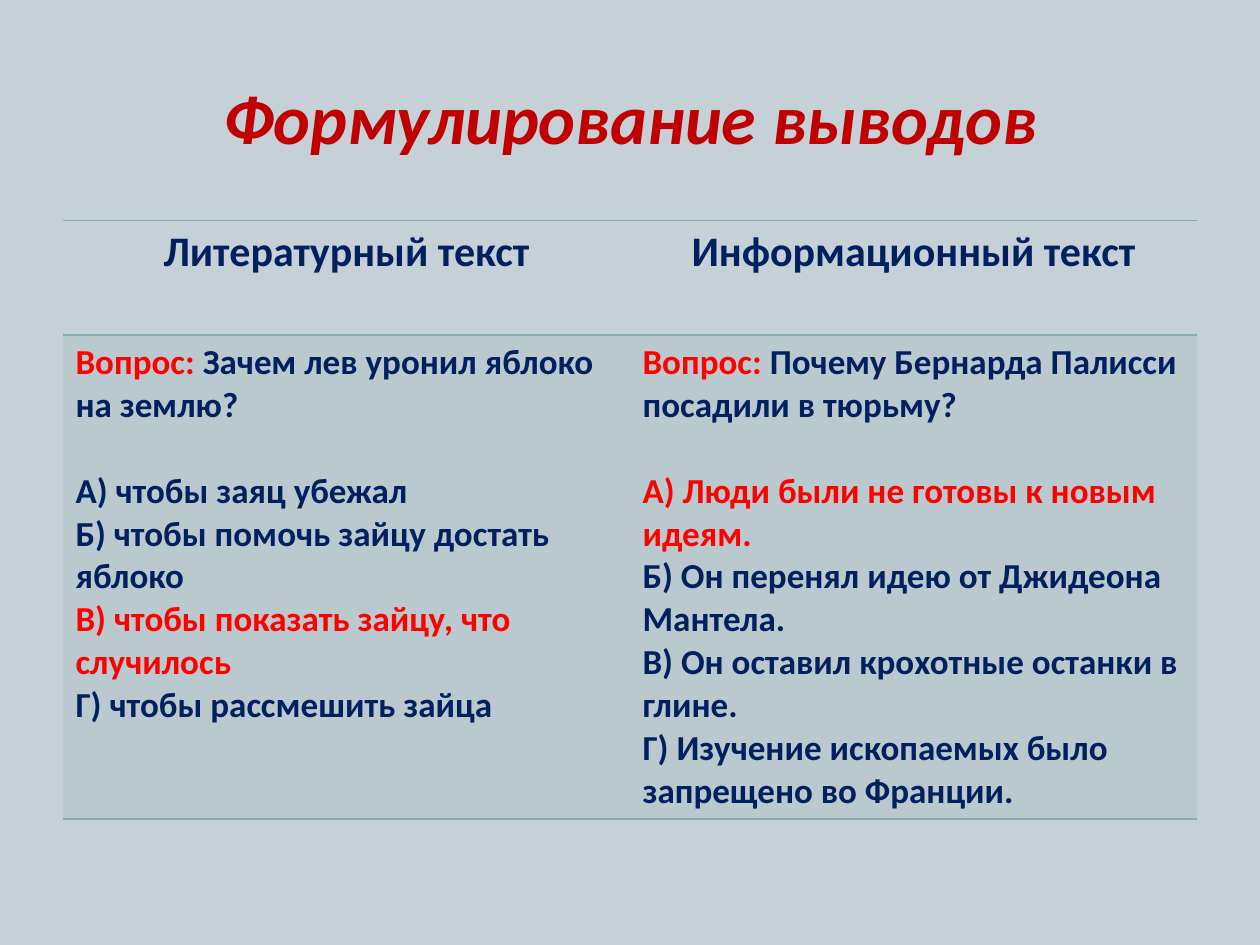
from lxml.etree import SubElement
from pptx import Presentation
from pptx.dml.color import RGBColor
from pptx.enum.text import MSO_ANCHOR, PP_ALIGN
from pptx.oxml import parse_xml
from pptx.oxml.ns import nsdecls, qn
from pptx.util import Inches, Pt

# Content: each column has a heading, a question, answers and the right answer
TITLE = "Формулирование выводов"
QUESTION_LABEL = "Вопрос: "
COLUMNS = [
    {
        "heading": "Литературный текст",
        "question": "Зачем лев уронил яблоко на землю?",
        "answers": [
            "А) чтобы заяц убежал",
            "Б) чтобы помочь зайцу достать яблоко",
            "В) чтобы показать зайцу, что случилось",
            "Г) чтобы рассмешить зайца",
        ],
        "correct": 2,
    },
    {
        "heading": "Информационный текст",
        "question": "Почему Бернарда Палисси посадили в тюрьму?",
        "answers": [
            "А) Люди были не готовы к новым идеям.",
            "Б) Он перенял идею от Джидеона Мантела.",
            "В) Он оставил крохотные останки в глине.",
            "Г) Изучение ископаемых было запрещено во Франции.",
        ],
        "correct": 0,
    },
]

FONT = "Calibri"
BACKGROUND = RGBColor(0xC5, 0xD1, 0xD7)
DARK_RED = RGBColor(0xC0, 0x00, 0x00)
RED = RGBColor(0xFF, 0x00, 0x00)
NAVY = RGBColor(0x00, 0x20, 0x60)
SAGE = RGBColor(0x8C, 0xAD, 0xAE)

LEFT, WIDTH = 0.5, 9
TABLE_TOP = 1.75
ROW_HEIGHTS = [0.91, 3.84]


def add_run(paragraph, text, size, color, italic=False):
    run = paragraph.add_run()
    run.text = text
    font = run.font
    font.name, font.size, font.bold, font.italic = FONT, Pt(size), True, italic
    font.color.rgb = color


def set_borders(cell, ruled_sides):
    """Rule the given sides (T, B) and clear the others."""
    properties = cell._tc.get_or_add_tcPr()
    for position, side in enumerate("LRTB"):
        paint = "<a:noFill/>"
        if side in ruled_sides:
            paint = f'<a:solidFill><a:srgbClr val="{SAGE}"/></a:solidFill>'
        line = parse_xml(f'<a:ln{side} {nsdecls("a")} w="12700">{paint}</a:ln{side}>')
        properties.insert(position, line)


def fill_heading(cell, column):
    cell.fill.background()
    set_borders(cell, "TB")
    paragraph = cell.text_frame.paragraphs[0]
    paragraph.alignment = PP_ALIGN.CENTER
    add_run(paragraph, column["heading"], 24, NAVY)


def fill_question(cell, column):
    cell.fill.solid()
    cell.fill.fore_color.rgb = SAGE
    tint = cell._tc.tcPr.find(qn("a:solidFill")).find(qn("a:srgbClr"))
    SubElement(tint, qn("a:alpha"), val="20000")
    set_borders(cell, "TB")

    question = cell.text_frame.paragraphs[0]
    question.space_after = Pt(24.4)  # one line of 20 pt text
    add_run(question, QUESTION_LABEL, 20, RED)
    add_run(question, column["question"], 20, NAVY)
    for index, answer in enumerate(column["answers"]):
        color = RED if index == column["correct"] else NAVY
        add_run(cell.text_frame.add_paragraph(), answer, 20, color)


# Slide
prs = Presentation()
prs.slide_width, prs.slide_height = Inches(10), Inches(7.5)
slide = prs.slides.add_slide(prs.slide_layouts[5])
slide.background.fill.solid()
slide.background.fill.fore_color.rgb = BACKGROUND

# Title
title = slide.shapes.title
title.left, title.top = Inches(LEFT), Inches(0.3)
title.width, title.height = Inches(WIDTH), Inches(1.25)
title.text_frame.vertical_anchor = MSO_ANCHOR.MIDDLE
heading = title.text_frame.paragraphs[0]
heading.alignment = PP_ALIGN.CENTER
add_run(heading, TITLE, 40, DARK_RED, italic=True)

# Comparison table
comparison = slide.shapes.add_table(
    len(ROW_HEIGHTS), len(COLUMNS), Inches(LEFT), Inches(TABLE_TOP),
    Inches(WIDTH), Inches(sum(ROW_HEIGHTS))).table
comparison.horz_banding = False
for row, height in zip(comparison.rows, ROW_HEIGHTS):
    row.height = Inches(height)
for index, column in enumerate(COLUMNS):
    comparison.columns[index].width = Inches(WIDTH / len(COLUMNS))
    fill_heading(comparison.cell(0, index), column)
    fill_question(comparison.cell(1, index), column)

prs.save("out.pptx")
